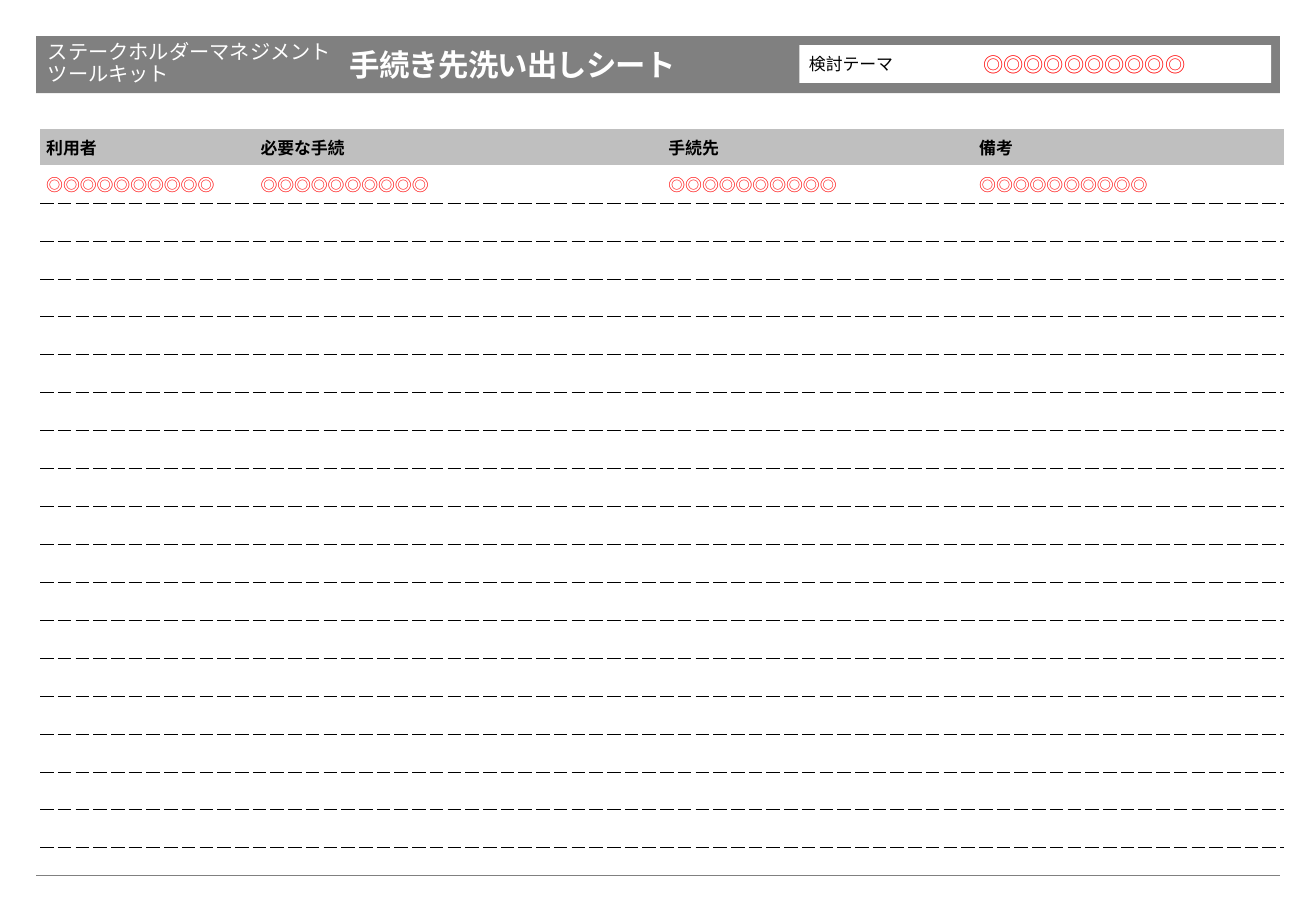
"""Build the procedure counterpart worksheet slide."""
from lxml import etree
from pptx import Presentation
from pptx.dml.color import RGBColor
from pptx.enum import shapes, text
from pptx.oxml import ns
from pptx.util import Pt

COLORS = {"bar": "808080", "head": "BFBFBF", "white": "FFFFFF",
          "black": "000000", "sample": "FF0000"}
FONT = "Noto Sans CJK JP"
SAMPLE = "◎◎◎◎◎◎◎◎◎◎"


def write(frame, lines, size, color, bold=False, align=text.PP_ALIGN.LEFT, spacing=1.0):
    """Fill a text frame with one formatted paragraph per line."""
    for number, line in enumerate(lines):
        paragraph = frame.add_paragraph() if number else frame.paragraphs[0]
        paragraph.alignment, paragraph.line_spacing = align, spacing
        run = paragraph.add_run()
        run.text = line
        for key, value in {"name": FONT, "size": Pt(size), "bold": bold}.items():
            setattr(run.font, key, value)
        run.font.color.rgb = RGBColor.from_string(COLORS[color])
        etree.SubElement(run.font._element, ns.qn("a:ea"), typeface=FONT)


def fit(frame, left=0):
    """Centre a wrapping text frame vertically with no other insets."""
    for key, value in {"word_wrap": True, "auto_size": text.MSO_AUTO_SIZE.NONE,
                       "vertical_anchor": text.MSO_ANCHOR.MIDDLE,
                       "margin_left": Pt(left), "margin_right": 0,
                       "margin_top": 0, "margin_bottom": 0}.items():
        setattr(frame, key, value)


prs = Presentation()
prs.slide_width, prs.slide_height = Pt(780), Pt(540)
slide = prs.slides.add_slide(prs.slide_layouts[5])

panels = []
for color, box in {"bar": (21.4, 21.4, 737.2, 33.8),
                   "white": (473.8, 26.8, 279.6, 22.3)}.items():
    panel = slide.shapes.add_shape(shapes.MSO_SHAPE.RECTANGLE, *map(Pt, box))
    panel.shadow.inherit = False
    panel.fill.solid()
    panel.fill.fore_color.rgb = RGBColor.from_string(COLORS[color])
    panel.line.fill.background()
    panels.append(panel)
theme = panels[1].text_frame
fit(theme, 5.7)
write(theme, ["検討テーマ"], 10, "black")

footer = slide.shapes.add_connector(
    shapes.MSO_CONNECTOR.STRAIGHT, Pt(21.4), Pt(519), Pt(758.6), Pt(519))
footer.line.width = Pt(1)
footer.line.color.rgb = RGBColor.from_string(COLORS["bar"])
etree.SubElement(footer._element.spPr, ns.qn("a:effectLst"))

toolkit = slide.shapes.add_textbox(Pt(28.4), Pt(28.2), Pt(177), Pt(19.6)).text_frame
fit(toolkit)
write(toolkit, ["ステークホルダーマネジメント", "ツールキット"], 12, "white", spacing=0.9)

title = slide.shapes.title
title.left, title.top, title.width, title.height = Pt(207.4), Pt(28.2), Pt(260), Pt(19.6)
fit(title.text_frame)
write(title.text_frame, ["手続き先洗い出しシート"], 18, "white", bold=True)
title.text_frame.paragraphs[0].runs[0].font._element.set("spc", "-50")
slide.shapes._spTree.append(title._element)

theme_value = slide.shapes.add_textbox(Pt(534), Pt(28.2), Pt(217.6), Pt(19.6)).text_frame
fit(theme_value)
write(theme_value, [SAMPLE], 12, "sample", align=text.PP_ALIGN.CENTER)

headings = ["利用者", "必要な手続", "手続先", "備考"]
sheet = slide.shapes.add_table(19, 4, Pt(23.8), Pt(76.5), Pt(737.2), Pt(426)).table
sheet.first_row = sheet.horz_banding = False
sheet._tbl.tblPr.find(ns.qn("a:tableStyleId")).text = "{2D5ABB26-0587-4C30-8999-92F81FD0307C}"
for column, width in zip(sheet.columns, (127, 241.8, 184.2, 184.2)):
    column.width = Pt(width)
for number, row in enumerate(sheet.rows):
    row.height = Pt(22.48 if number else 21.4)
    for cell, heading in zip(row.cells, headings):
        cell.vertical_anchor = text.MSO_ANCHOR.MIDDLE
        for side in ("left", "right", "top", "bottom"):
            setattr(cell, f"margin_{side}", Pt(3.6 if side in ("left", "right") else 3))
        if number == 0:
            write(cell.text_frame, [heading], 10, "black", bold=True)
            cell.fill.solid()
            cell.fill.fore_color.rgb = RGBColor.from_string(COLORS["head"])
            continue
        if number == 1:
            write(cell.text_frame, [SAMPLE], 10, "sample")
        else:
            etree.SubElement(cell.text_frame.paragraphs[0]._p, ns.qn("a:endParaRPr"), sz="1000")
        border = etree.SubElement(cell._tc.get_or_add_tcPr(), ns.qn("a:lnB"), w=str(Pt(0.5)))
        ink = etree.SubElement(border, ns.qn("a:solidFill"))
        etree.SubElement(ink, ns.qn("a:srgbClr"), val=COLORS["black"])
        etree.SubElement(border, ns.qn("a:prstDash"), val="dash")
        cell.fill.background()

prs.save("out.pptx")
